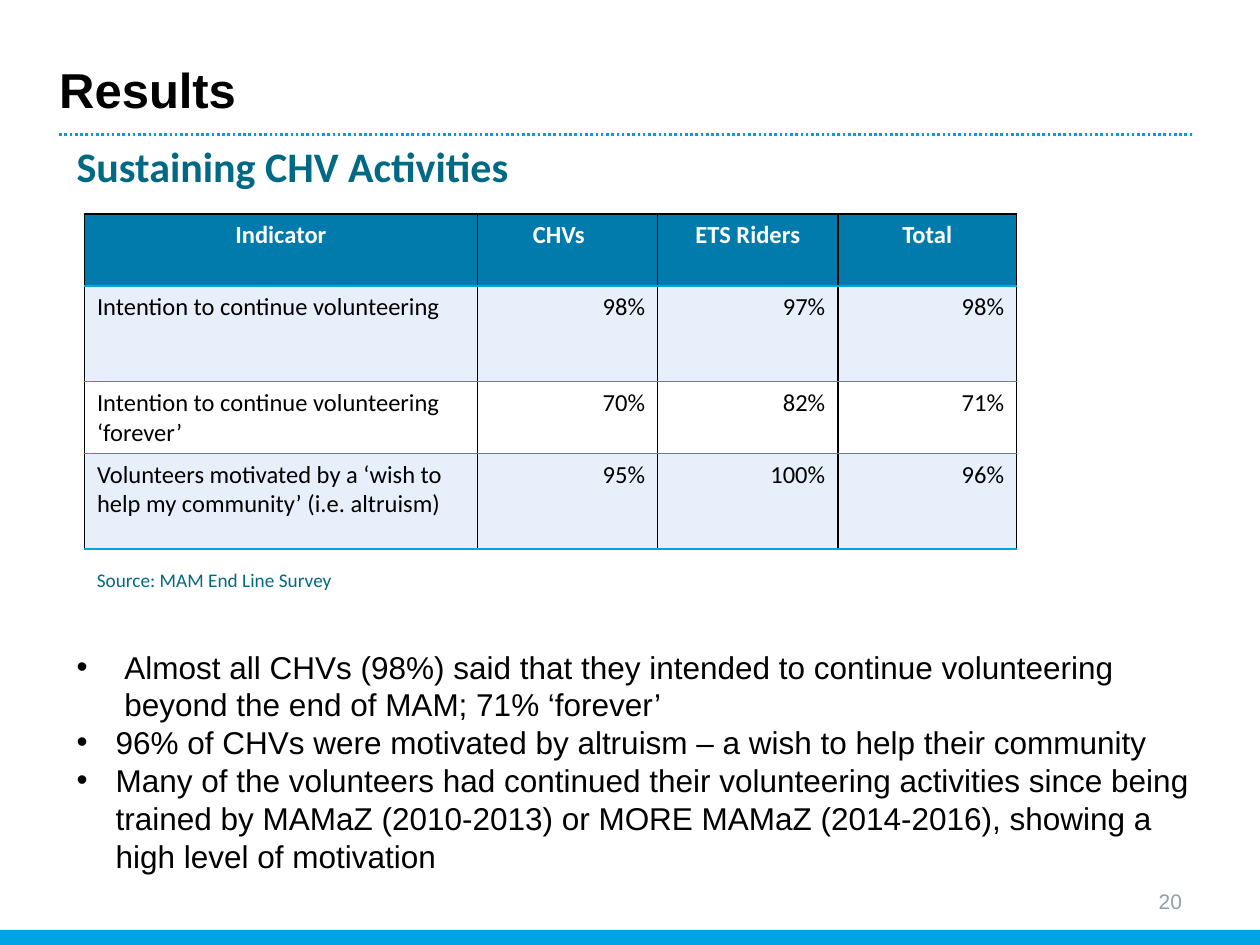
from dataclasses import dataclass

from lxml.etree import SubElement
from pptx import Presentation
from pptx.dml.color import RGBColor as Color
from pptx.enum.dml import MSO_LINE as Dash
from pptx.enum.shapes import MSO_CONNECTOR as Connector, MSO_SHAPE as Preset
from pptx.enum.text import MSO_ANCHOR as Anchor, PP_ALIGN as Align
from pptx.oxml.ns import qn
from pptx.util import Inches, Pt


@dataclass(frozen=True)
class Theme:
    accent: str = "00A4E4"
    rule: str = "00A0DF"
    header: str = "007BAB"
    band: str = "E7F0FA"
    heading: str = "006983"
    muted: str = "8CA1AD"
    black: str = "000000"
    white: str = "FFFFFF"
    sans: str = "Arial"
    humanist: str = "Calibri"
    title: int = 28
    subtitle: int = 24
    body: int = 18
    cell: int = 14
    number: int = 12
    source: int = 11


@dataclass(frozen=True)
class Area:
    left: float
    top: float
    width: float
    height: float

    def lengths(self):
        return [Inches(v) for v in (self.left, self.top, self.width, self.height)]


@dataclass(frozen=True)
class Bullet:
    text: str
    indent: float


@dataclass(frozen=True)
class Row:
    cells: tuple[str, ...]
    height: float
    fill: str


THEME = Theme()
COLUMN_WIDTHS = (3.12, 1.43, 1.43, 1.42)
ROWS = (
    Row(("Indicator", "CHVs", "ETS Riders", "Total"), 0.57, THEME.header),
    Row(("Intention to continue volunteering", "98%", "97%", "98%"), 0.76, THEME.band),
    Row(("Intention to continue volunteering ‘forever’", "70%", "82%", "71%"), 0.57, THEME.white),
    Row(("Volunteers motivated by a ‘wish to help my community’ (i.e. altruism)",
         "95%", "100%", "96%"), 0.76, THEME.band),
)
BULLETS = (
    Bullet("Almost all CHVs (98%) said that they intended to continue volunteering "
           "beyond the end of MAM; 71% ‘forever’", 0.38),
    Bullet("96% of CHVs were motivated by altruism – a wish to help their community", 0.31),
    Bullet("Many of the volunteers had continued their volunteering activities since being "
           "trained by MAMaZ (2010-2013) or MORE MAMaZ (2014-2016), showing a high level "
           "of motivation", 0.31),
)


def write(para, text: str, *, size: int, font: str = THEME.sans, color: str = THEME.black,
          bold: bool = False, align=Align.LEFT) -> None:
    para.alignment = align
    span = para.add_run()
    span.text = text
    span.font.size = Pt(size)
    span.font.name = font
    span.font.bold = bold
    span.font.color.rgb = Color.from_string(color)


def add_frame(page, area: Area, anchor=Anchor.TOP):
    frame = page.shapes.add_textbox(*area.lengths()).text_frame
    frame.word_wrap = True
    frame.vertical_anchor = anchor
    return frame


def add_footer_bar(page, area: Area) -> None:
    bar = page.shapes.add_shape(Preset.RECTANGLE, *area.lengths())
    bar.shadow.inherit = False
    bar.fill.solid()
    bar.fill.fore_color.rgb = Color.from_string(THEME.accent)
    bar.line.fill.background()


def add_rule(page, left: float, right: float, top: float) -> None:
    rule = page.shapes.add_connector(
        Connector.STRAIGHT, Inches(left), Inches(top), Inches(right), Inches(top))
    rule.line.color.rgb = Color.from_string(THEME.rule)
    rule.line.width = Pt(1.5)
    rule.line.dash_style = Dash.ROUND_DOT
    SubElement(rule._element.spPr, qn("a:effectLst"))


def add_bullets(page, area: Area, bullets: tuple[Bullet, ...]) -> None:
    frame = add_frame(page, area)
    for index, bullet in enumerate(bullets):
        para = frame.add_paragraph() if index else frame.paragraphs[0]
        write(para, bullet.text, size=THEME.body)
        properties = para._p.get_or_add_pPr()
        properties.set("marL", str(Inches(bullet.indent)))
        properties.set("indent", str(-Inches(bullet.indent)))
        SubElement(properties, qn("a:buFont"), typeface=THEME.sans)
        SubElement(properties, qn("a:buChar"), char="•")


def set_borders(cell, top: str) -> None:
    properties = cell._tc.get_or_add_tcPr()
    sides = {"L": THEME.black, "R": THEME.black, "T": top, "B": THEME.accent}
    for position, (side, color) in enumerate(sides.items()):
        border = SubElement(properties, qn(f"a:ln{side}"), w=str(Pt(1)))
        fill = SubElement(border, qn("a:solidFill"))
        SubElement(fill, qn("a:srgbClr"), val=color)
        properties.insert(position, border)


def add_results_table(page, left: float, top: float) -> None:
    area = Area(left, top, sum(COLUMN_WIDTHS), sum(row.height for row in ROWS))
    table = page.shapes.add_table(len(ROWS), len(COLUMN_WIDTHS), *area.lengths()).table
    table.horz_banding = False
    for column, width in zip(table.columns, COLUMN_WIDTHS):
        column.width = Inches(width)
    for row_index, row in enumerate(ROWS):
        table.rows[row_index].height = Inches(row.height)
        is_header = row_index == 0
        for column_index, text in enumerate(row.cells):
            cell = table.cell(row_index, column_index)
            cell.fill.solid()
            cell.fill.fore_color.rgb = Color.from_string(row.fill)
            set_borders(cell, THEME.black if is_header else THEME.accent)
            body_align = Align.RIGHT if column_index else Align.LEFT
            write(cell.text_frame.paragraphs[0], text, size=THEME.cell, font=THEME.humanist,
                  color=THEME.white if is_header else THEME.black, bold=is_header,
                  align=Align.CENTER if is_header else body_align)
    table.cell(0, 1).margin_right = Inches(0.24)


def main() -> None:
    deck = Presentation()
    deck.slide_width, deck.slide_height = Inches(10), Inches(7.5)
    page = deck.slides.add_slide(deck.slide_layouts[6])

    add_footer_bar(page, Area(0, 7.38, 10, 0.12))
    add_rule(page, 0.47, 9.48, 1.07)

    title = add_frame(page, Area(0.47, 0.39, 9.01, 0.63), Anchor.MIDDLE)
    title.margin_left = title.margin_right = 0
    write(title.paragraphs[0], "Results", size=THEME.title, bold=True)

    number = add_frame(page, Area(7.15, 6.95, 2.33, 0.4), Anchor.MIDDLE)
    write(number.paragraphs[0], "20", size=THEME.number, color=THEME.muted, align=Align.RIGHT)

    add_bullets(page, Area(0.51, 5.09, 9.06, 1.92), BULLETS)
    add_results_table(page, 0.67, 1.7)

    source = add_frame(page, Area(0.67, 4.46, 4.88, 0.29))
    write(source.paragraphs[0], "Source: MAM End Line Survey", size=THEME.source,
          font=THEME.humanist, color=THEME.heading)

    subtitle = add_frame(page, Area(0.51, 1.07, 7.56, 0.5))
    write(subtitle.paragraphs[0], "Sustaining CHV Activities", size=THEME.subtitle,
          font=THEME.humanist, color=THEME.heading, bold=True)

    deck.save("out.pptx")


if __name__ == "__main__":
    main()
